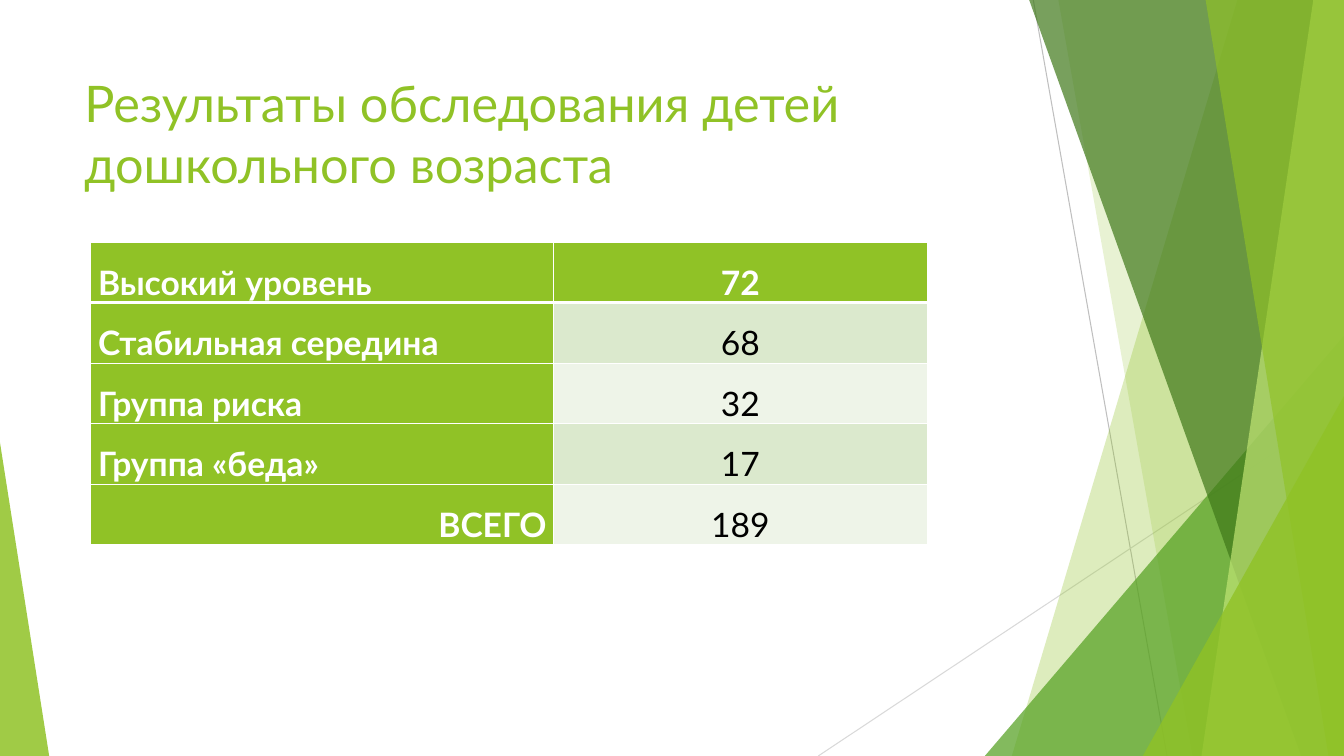
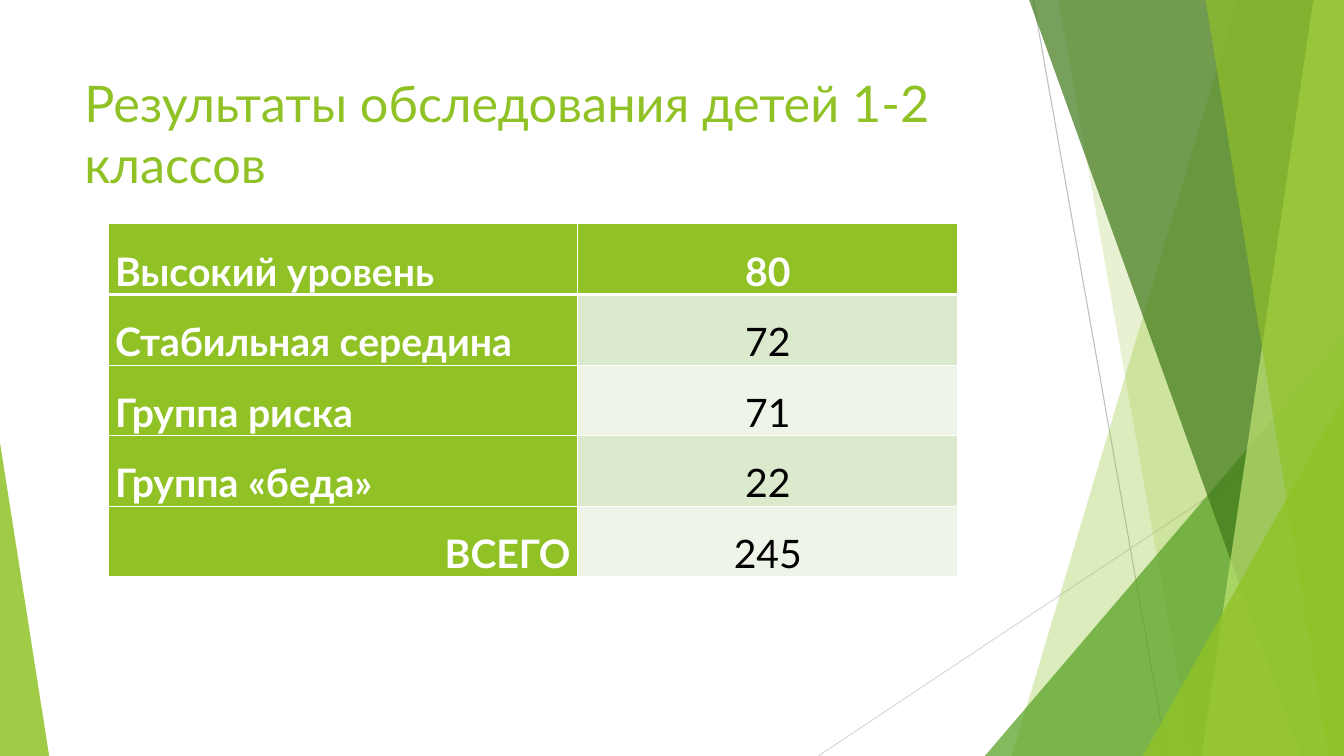
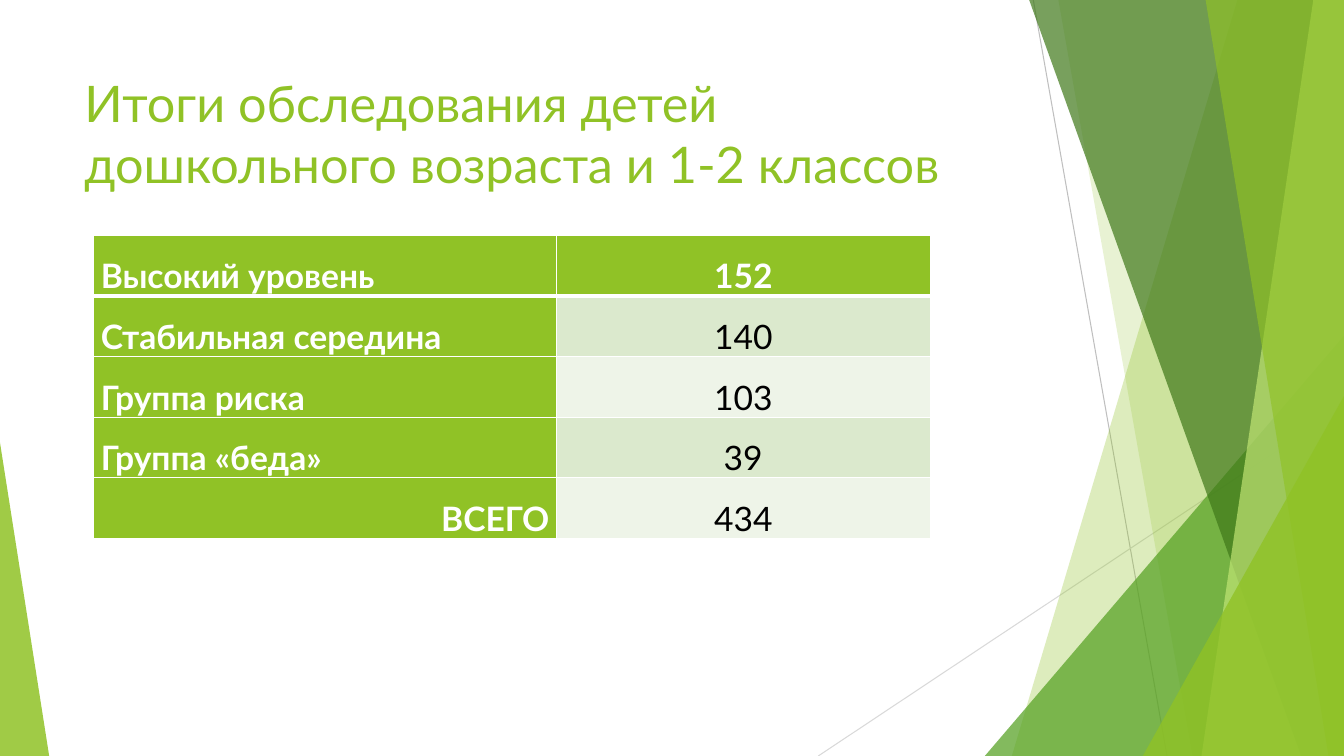
from dataclasses import dataclass

from pptx import Presentation
from pptx import util as u
from pptx.dml.color import RGBColor
from pptx.enum import shapes, text
from pptx.oxml import parse_xml
from pptx.oxml.ns import nsdecls, qn
from lxml import etree


@dataclass(frozen=True)
class Theme:
    font: str = "Lato"
    green: str = "90C226"
    leaf: str = "54A021"
    forest: str = "3F7819"
    lime: str = "C0E474"
    white: str = "FFFFFF"
    black: str = "000000"
    line_dark: str = "BFBFBF"
    line_light: str = "D9D9D9"
    bands: tuple = ("EEF4E8", "DBE9CD")
    title_size: int = 36
    hairline: float = 0.75
    border: int = 1
    header_border: int = 3


THEME = Theme()
WIDTH, HEIGHT = 33.87, 19.05
BLEED = -0.02
LEVELS = ("Высокий уровень", "Стабильная середина", "Группа риска", "Группа «беда»")
TOTAL = "ВСЕГО"

RESULTS = (
    dict(title="Результаты обследования детей дошкольного возраста",
         values=(72, 68, 32, 17), size=24,
         left=2.29, top=6.1, columns=(11.66, 9.42), row_height=1.32),
    dict(title="Результаты обследования детей 1-2 классов",
         values=(80, 72, 71, 22), size=28,
         left=2.72, top=5.64, columns=(11.84, 9.58), row_height=1.47),
    dict(title="Итоги обследования детей дошкольного возраста и 1-2 классов",
         values=(152, 140, 103, 39), size=24,
         left=2.36, top=5.94, columns=(11.66, 9.42), row_height=1.4),
)


def apply(target, **values):
    for name, value in values.items():
        setattr(target, name, value)


def paint(shape, color, opacity):
    """Fill without outline or shadow; opacity is in percent."""
    shape.shadow.inherit = False
    shape.line.fill.background()
    shape.fill.solid()
    shape.fill.fore_color.rgb = RGBColor.from_string(color)
    tint = shape.fill._xPr.find(qn("a:solidFill"))[0]
    etree.SubElement(tint, qn("a:alpha"), val=str(opacity * 1000))


def add_line(group, start, end, color):
    points = [u.Cm(value) for value in (*start, *end)]
    line = group.shapes.add_connector(shapes.MSO_CONNECTOR.STRAIGHT, *points)
    line.line.width = u.Pt(THEME.hairline)
    line.line.color.rgb = RGBColor.from_string(color)
    etree.SubElement(line._element.spPr, qn("a:effectLst"))


def add_strip(group, top_x, bottom_x, color, opacity):
    """Full-height band from a slanted left edge to the right side of the page."""
    corners = [(u.Cm(x), u.Cm(y)) for x, y in (
        (top_x, BLEED), (WIDTH, BLEED), (WIDTH, HEIGHT), (bottom_x, HEIGHT))]
    outline = group.shapes.build_freeform(*corners[0])
    outline.add_line_segments(corners[1:], close=True)
    paint(outline.convert_to_shape(), color, opacity)


def add_spike(group, left, right, top, apex, color, opacity):
    """Right triangle on the bottom edge; apex 0 is at the left, 1 at the right."""
    spike = group.shapes.add_shape(
        shapes.MSO_SHAPE.ISOSCELES_TRIANGLE,
        u.Cm(left), u.Cm(top), u.Cm(right - left), u.Cm(HEIGHT - top))
    spike.adjustments[0] = apex
    paint(spike, color, opacity)


def add_facets(page):
    group = page.shapes.add_group_shape()
    add_line(group, (26.04, 0), (29.41, HEIGHT), THEME.line_dark)
    add_line(group, (WIDTH, 10.24), (20.62, HEIGHT), THEME.line_light)
    add_strip(group, 31.19, 25.5, THEME.green, 30)
    add_strip(group, 26.67, 30.05, THEME.green, 20)
    add_spike(group, 24.82, WIDTH, 8.46, 1, THEME.leaf, 72)
    add_strip(group, 25.93, 32.79, THEME.forest, 70)
    add_strip(group, 33.1, 30.28, THEME.lime, 70)
    add_strip(group, 30.38, 33.48, THEME.green, 65)
    add_spike(group, 28.8, WIDTH, 9.98, 1, THEME.green, 80)
    add_spike(group, 0, 1.24, 11.15, 0, THEME.green, 85)


def write(frame, words, size, color, bold=False, **layout):
    para = frame.paragraphs[0]
    apply(para, **layout)
    span = para.add_run()
    span.text = words
    apply(span.font, name=THEME.font, size=u.Pt(size), bold=bold)
    span.font.color.rgb = RGBColor.from_string(color)


def add_title(page, words):
    box = page.shapes.add_textbox(u.Cm(1.88), u.Cm(1.7), u.Cm(23.88), u.Cm(3.66))
    apply(box.text_frame, word_wrap=True, vertical_anchor=text.MSO_ANCHOR.TOP)
    write(box.text_frame, words, THEME.title_size, THEME.green)


def add_borders(cell, row):
    heavy = {(0, "B"), (1, "T")}
    for side in "LRTB":
        points = THEME.header_border if (row, side) in heavy else THEME.border
        cell._tc.get_or_add_tcPr().append(parse_xml(
            f'<a:ln{side} {nsdecls("a")} w="{u.Pt(points)}"><a:solidFill>'
            f'<a:srgbClr val="{THEME.white}"/></a:solidFill></a:ln{side}>'))


def fill_cell(cell, row, words, size, align, strong):
    """Strong cells are bold white on green; the others sit on a pale band."""
    side = u.Cm(0.18)
    apply(cell, margin_left=side, margin_right=side, margin_top=0, margin_bottom=0)
    add_borders(cell, row)
    cell.fill.solid()
    cell.fill.fore_color.rgb = RGBColor.from_string(
        THEME.green if strong else THEME.bands[row % 2])
    write(cell.text_frame, words, size, THEME.white if strong else THEME.black,
          strong, alignment=align, line_spacing=1.5)


def add_result_table(page, values, size, left, top, columns, row_height):
    rows = [*zip(LEVELS, values), (TOTAL, sum(values))]
    table = page.shapes.add_table(
        len(rows), len(columns), u.Cm(left), u.Cm(top),
        u.Cm(sum(columns)), u.Cm(row_height * len(rows))).table
    for column, width in zip(table.columns, columns):
        column.width = u.Cm(width)
    for row, (label, value) in enumerate(rows):
        label_align = text.PP_ALIGN.RIGHT if label == TOTAL else text.PP_ALIGN.LEFT
        fill_cell(table.cell(row, 0), row, label, size, label_align, True)
        fill_cell(table.cell(row, 1), row, str(value), size,
                  text.PP_ALIGN.CENTER, row == 0)


def main():
    deck = Presentation()
    apply(deck, slide_width=u.Cm(WIDTH), slide_height=u.Cm(HEIGHT))
    for result in RESULTS:
        page = deck.slides.add_slide(deck.slide_layouts[6])
        add_facets(page)
        details = dict(result)
        add_title(page, details.pop("title"))
        add_result_table(page, **details)
    deck.save("out.pptx")


if __name__ == "__main__":
    main()
